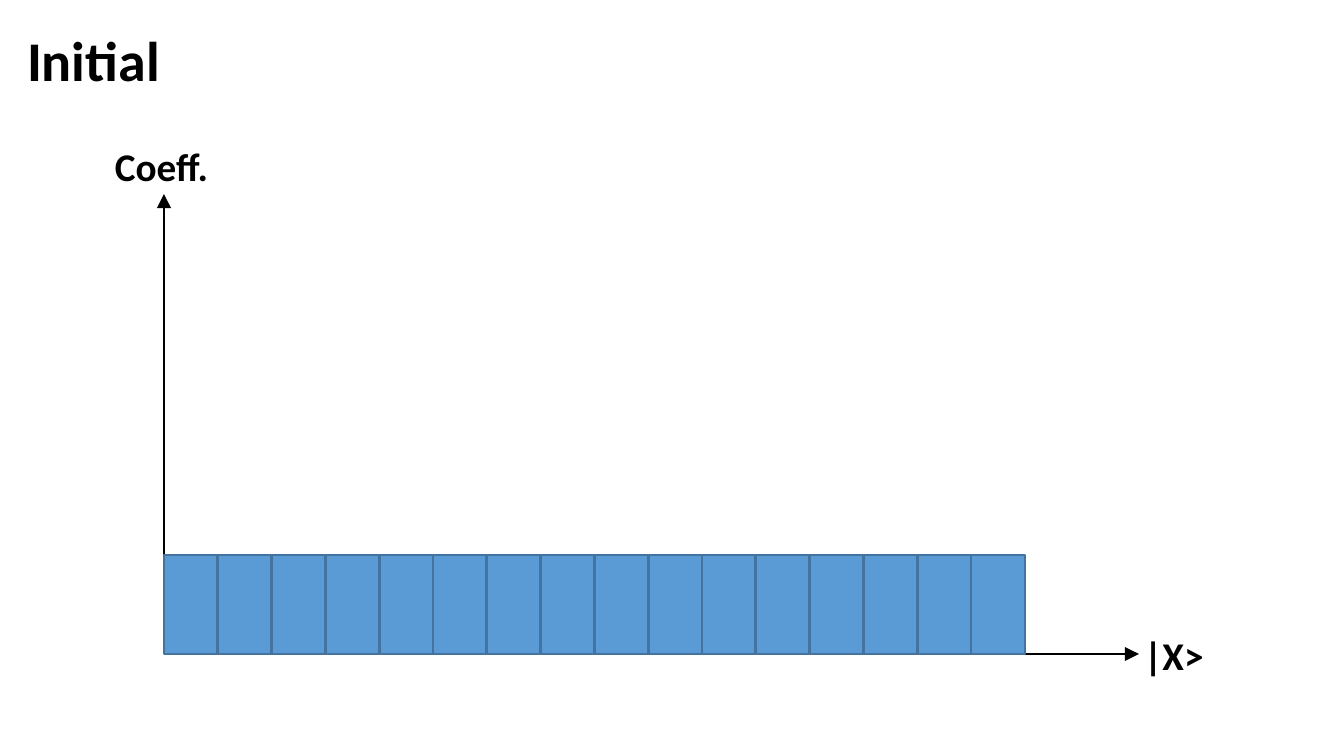
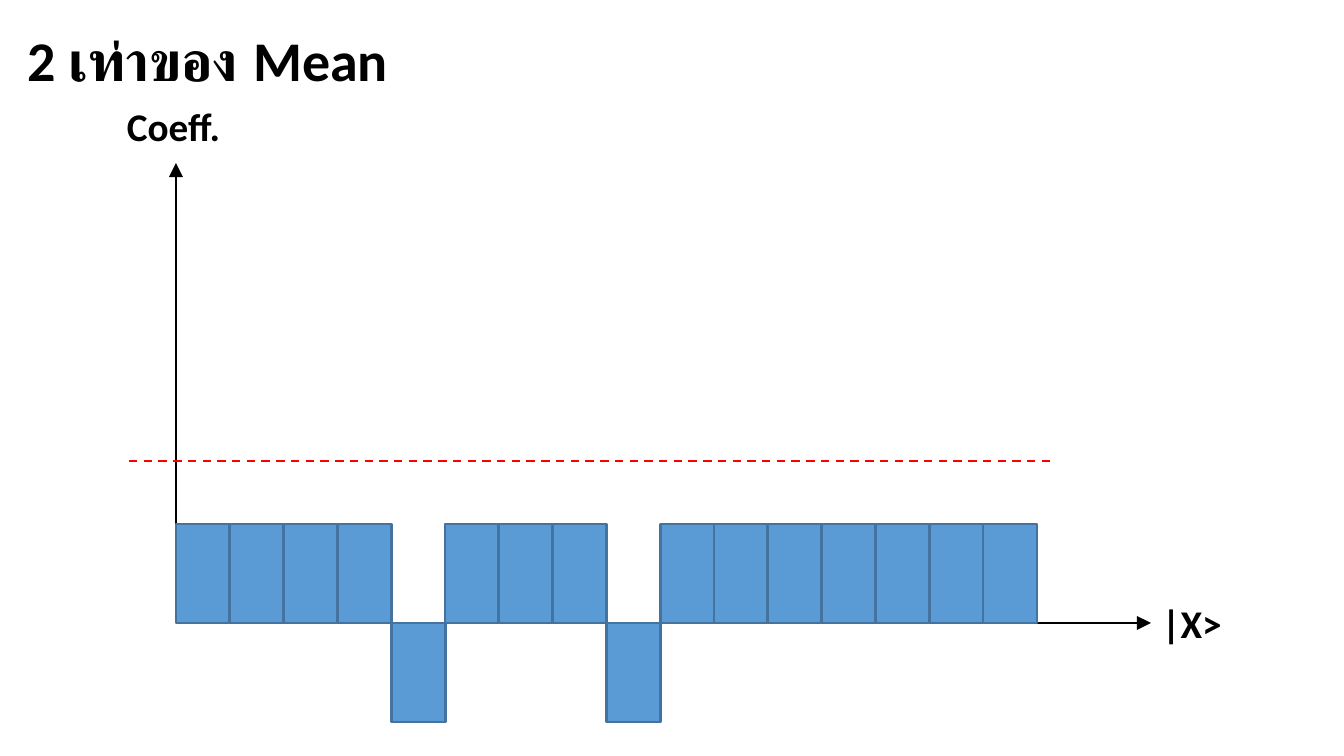
from lxml.etree import SubElement
from pptx import Presentation
from pptx.dml.color import RGBColor
from pptx.enum.dml import MSO_LINE
from pptx.enum.shapes import MSO_CONNECTOR, MSO_SHAPE
from pptx.enum.text import MSO_ANCHOR, MSO_AUTO_SIZE, PP_ALIGN
from pptx.oxml.ns import qn
from pptx.util import Pt

# Content: positions in px, bar values in units of one bar height
DIAGRAMS = [
    {
        "title": "Initial",
        "title_width": 292,
        "origin": (164, 654),
        "values": [1] * 16,
        "labels": [("|X>", 1134, 626), ("Coeff.", 105, 137)],
        "mean_line": None,
    },
    {
        "title": "2 เท่าของ Mean",
        "title_width": 400,
        "origin": (176, 623),
        "values": [1, 1, 1, 1, -1, 1, 1, 1, -1, 1, 1, 1, 1, 1, 1, 1],
        "labels": [("|X>", 1152, 594), ("Coeff.", 117, 97)],
        "mean_line": (129, 1053, 461),
    },
]

# Shared style
COLORS = {"ink": "000000", "bar": "5B9BD5", "bar_edge": "43739E", "mean": "FF0000"}
FONT = "Calibri"
EMU_PER_PX = 12192000 / 1344
SLIDE_SIZE = (1344, 756)
TITLE_AT = (17, 20)
TITLE_HEIGHT = 78
LABEL_SIZE = (119, 57)
AXIS_X, AXIS_Y = 975, 460
BAR_WIDTH, BAR_HEIGHT, BAR_PITCH = 54, 99, 53.8


def px(*lengths):
    return [round(length * EMU_PER_PX) for length in lengths]


def color(name):
    return RGBColor.from_string(COLORS[name])


def write(box, text, size):
    frame = box.text_frame
    frame.text = text
    frame.word_wrap = True
    frame.auto_size = MSO_AUTO_SIZE.SHAPE_TO_FIT_TEXT
    frame.vertical_anchor = MSO_ANCHOR.TOP
    paragraph = frame.paragraphs[0]
    paragraph.alignment = PP_ALIGN.LEFT
    font = paragraph.runs[0].font
    font.name, font.size, font.bold = FONT, Pt(size), True
    font.color.rgb = color("ink")


def add_line(slide, start, end, ink, width):
    line = slide.shapes.add_connector(MSO_CONNECTOR.STRAIGHT, *px(*start, *end))
    line.line.color.rgb = color(ink)
    line.line.width = Pt(width)
    SubElement(line._element.spPr, qn("a:effectLst"))
    return line


def add_axis(slide, start, end):
    axis = add_line(slide, start, end, "ink", 2)
    SubElement(axis.line._get_or_add_ln(), qn("a:tailEnd"), type="triangle", w="lg", len="lg")


def add_bar(slide, left, top):
    bar = slide.shapes.add_shape(MSO_SHAPE.RECTANGLE, *px(left, top, BAR_WIDTH, BAR_HEIGHT))
    bar.shadow.inherit = False
    bar.fill.solid()
    bar.fill.fore_color.rgb = color("bar")
    bar.line.color.rgb = color("bar_edge")
    bar.line.width = Pt(2)


def add_diagram(prs, diagram):
    slide = prs.slides.add_slide(prs.slide_layouts[5])
    x, y = diagram["origin"]

    # Title
    title = slide.shapes.title
    title.left, title.top, title.width, title.height = px(
        *TITLE_AT, diagram["title_width"], TITLE_HEIGHT)
    write(title, diagram["title"], 40)

    # Axes
    add_axis(slide, (x, y), (x + AXIS_X, y))
    add_axis(slide, (x, y), (x, y - AXIS_Y))

    # Bars stand on the axis, or hang below it when negative
    for i, value in enumerate(diagram["values"]):
        add_bar(slide, x + i * BAR_PITCH, y - BAR_HEIGHT if value > 0 else y)

    # Mean line
    if diagram["mean_line"]:
        left, right, height = diagram["mean_line"]
        mean = add_line(slide, (left, height), (right, height), "mean", 1.5)
        mean.line.dash_style = MSO_LINE.DASH

    # Axis labels
    for text, left, top in diagram["labels"]:
        write(slide.shapes.add_textbox(*px(left, top, *LABEL_SIZE)), text, 28)


def main():
    prs = Presentation()
    prs.slide_width, prs.slide_height = px(*SLIDE_SIZE)
    for diagram in DIAGRAMS:
        add_diagram(prs, diagram)
    prs.save("out.pptx")


if __name__ == "__main__":
    main()
